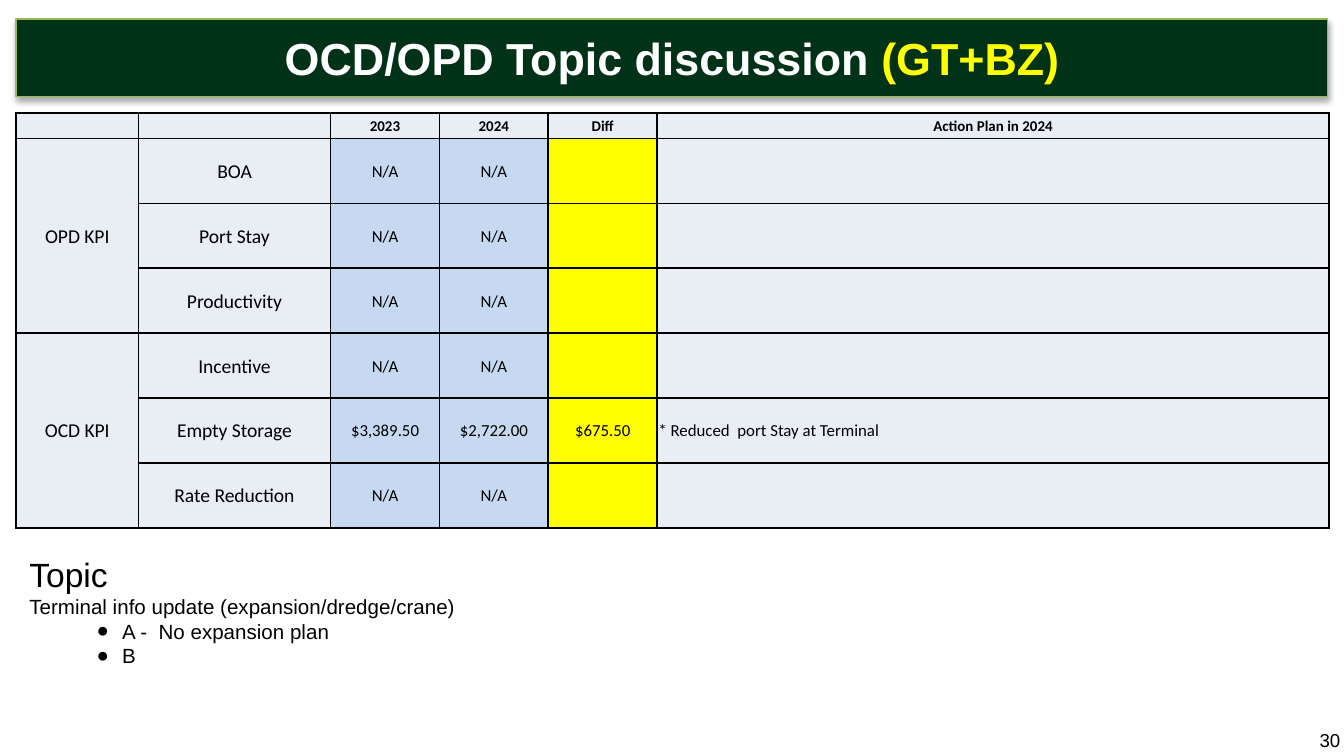
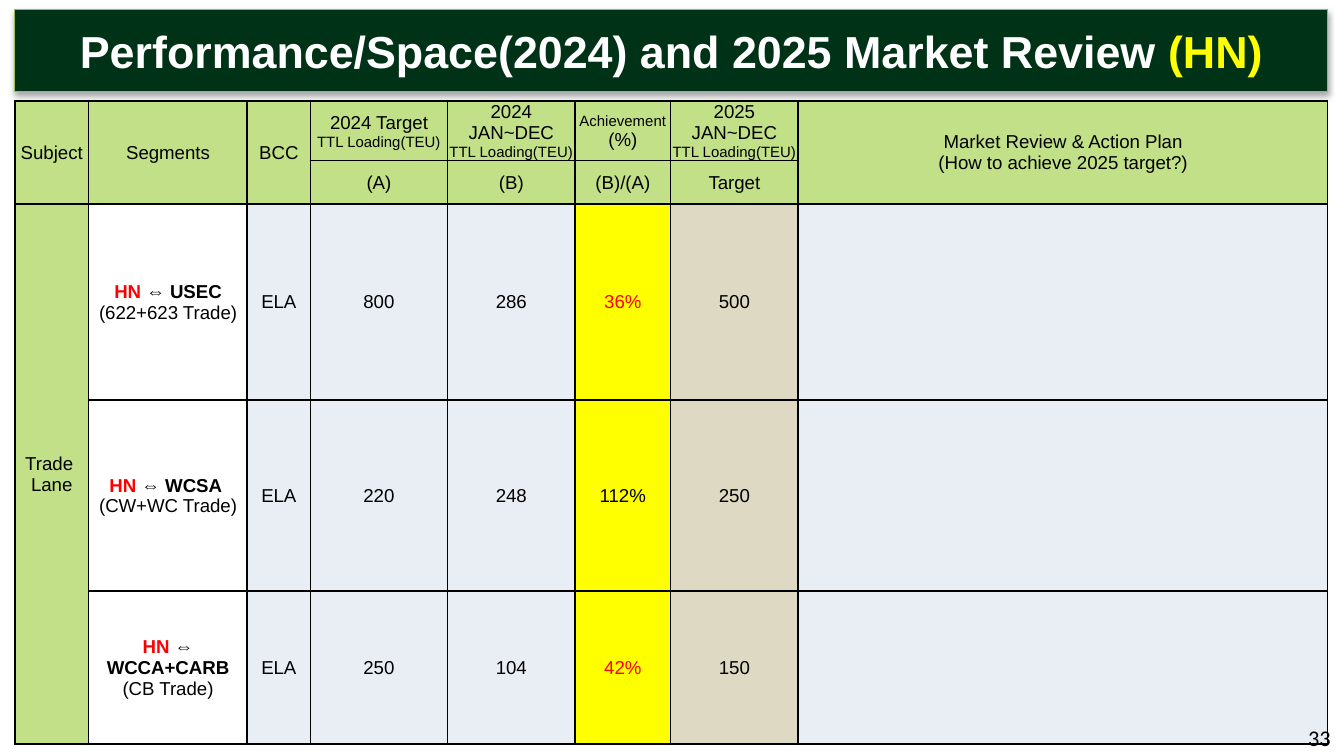
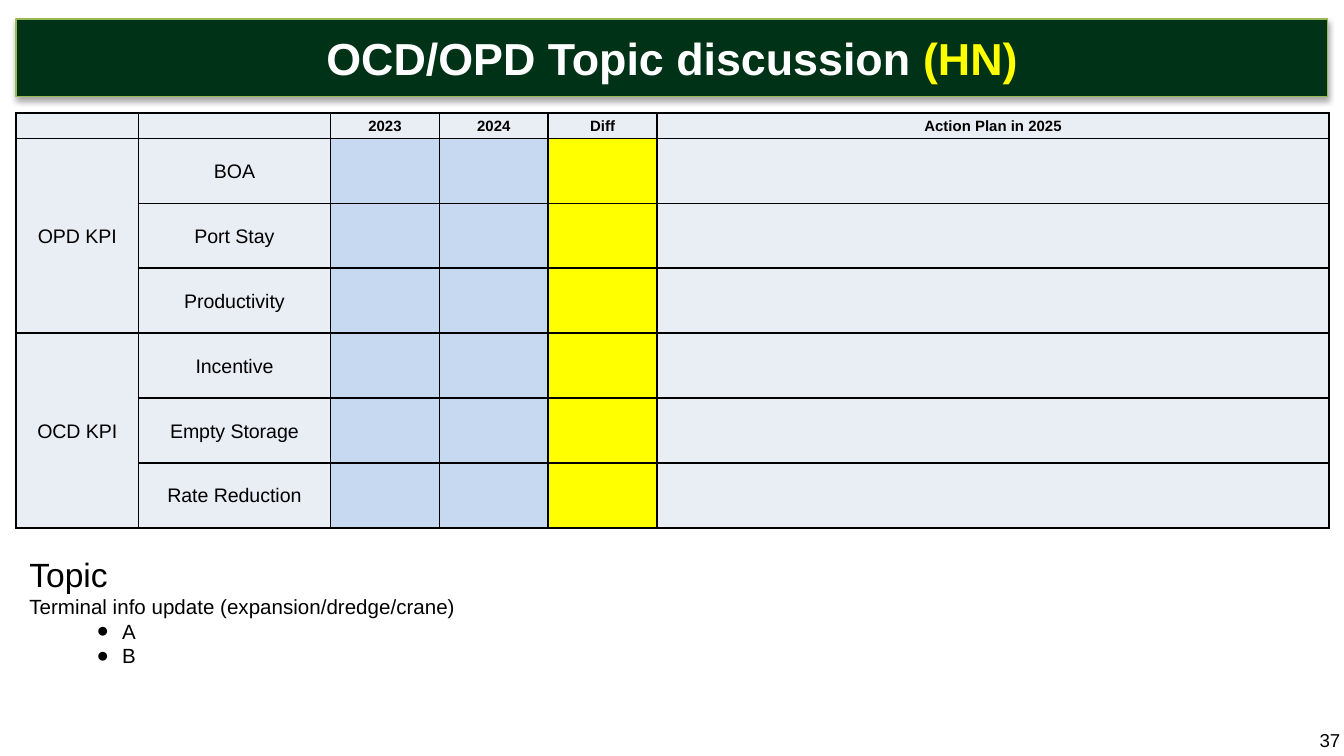
import lxml.etree
import pptx
import pptx.dml.color
import pptx.enum.text
import pptx.oxml.ns
import pptx.util

Inches = pptx.util.Inches
Pt = pptx.util.Pt
qn = pptx.oxml.ns.qn
ALIGN = pptx.enum.text.PP_ALIGN
ANCHOR = pptx.enum.text.MSO_ANCHOR
FIT = pptx.enum.text.MSO_AUTO_SIZE

PAGE_WIDTH = 10
PAGE_HEIGHT = PAGE_WIDTH * 9 / 16

BLACK, WHITE, RED, YELLOW = "000000", "FFFFFF", "FF0000", "FFFF00"
BAND, BAND_EDGE = "003217", "98B955"
PALE, BLUE, GREEN, TAN = "E9EDF4", "C6D9F1", "C2E088", "DDD9C3"

KPI_GROUPS = [
    ("OPD KPI", ["BOA", "Port Stay", "Productivity"]),
    ("OCD KPI", ["Incentive", "Empty Storage", "Rate Reduction"]),
]
KPI_COLUMNS = [0.91, 1.43, 0.81, 0.81, 0.81, 5]
KPI_FILLS = [PALE, PALE, BLUE, BLUE, YELLOW, PALE]
KPI_HEADER_HEIGHT, KPI_BODY_HEIGHT = 0.19, 2.9

KPI_PAGES = {
    "GT+BZ": {
        "number": "30", "font": "Calibri", "plan": "Action Plan in 2024",
        "default": ["N/A", "N/A", "", ""],
        "values": {"Empty Storage": ["$3,389.50", "$2,722.00", "$675.50",
                                     "* Reduced  port Stay at Terminal"]},
        "bullets": ["A -  No expansion plan", "B"],
    },
    "HN": {
        "number": "37", "font": "Arial", "plan": "Action Plan in 2025",
        "default": ["", "", "", ""], "values": {},
        "bullets": ["A", "B"],
    },
}

MARKET_COLUMNS = [0.55, 1.18, 0.47, 1.02, 0.95, 0.71, 0.95, 3.94]
MARKET_ROWS = [0.44, 0.32, 1.46, 1.42, 1.14]
MARKET_FILLS = [GREEN, WHITE, PALE, PALE, PALE, YELLOW, TAN, PALE]
MARKET_HEADER = [
    ["Subject"], ["Segments"], ["BCC"],
    ["2024 Target", "TTL Loading(TEU)"],
    ["2024 JAN~DEC", "TTL Loading(TEU)"],
    ["Achievement", "(%)"],
    ["2025 JAN~DEC", "TTL Loading(TEU)"],
    ["Market Review & Action Plan", "(How to achieve 2025 target?)"],
]
MARKET_SUBHEADER = {3: "(A)", 4: "(B)", 5: "(B)/(A)", 6: "Target"}
SMALL_LINES = ["TTL Loading(TEU)", "Achievement"]
LANES = [
    ("⇔ USEC", "(622+623 Trade)", ["ELA", "800", "286", "36%", "500"]),
    ("⇔ WCSA ", "(CW+WC Trade)", ["ELA", "220", "248", "112%", "250"]),
    ("⇔ WCCA+CARB", "(CB Trade)", ["ELA", "250", "104", "42%", "150"]),
]


def color(value):
    return pptx.dml.color.RGBColor.from_string(value)


def set_all(target, values):
    for name, value in values.items():
        setattr(target, name, value)


def place(box, left, top, width, height):
    set_all(box, {"left": Inches(left), "top": Inches(top),
                  "width": Inches(width), "height": Inches(height)})


def write_para(para, spans, font="Arial", size=10, align=ALIGN.LEFT):
    para.alignment = align
    for text, changes in spans:
        style = {"name": font, "size": size, "bold": False, "color": BLACK, **changes}
        span = para.add_run()
        span.text = text
        span.font.color.rgb = color(style.pop("color"))
        style["size"] = Pt(style["size"])
        set_all(span.font, style)


def write_lines(frame, lines, **style):
    for index, spans in enumerate(lines):
        para = frame.add_paragraph() if index else frame.paragraphs[0]
        write_para(para, spans, **style)


def add_band_title(deck, title, region, area):
    page = deck.slides.add_slide(deck.slide_layouts[5])
    band = page.shapes.title
    place(band, *area)
    band.fill.solid()
    band.fill.fore_color.rgb = color(BAND)
    band.line.color.rgb = color(BAND_EDGE)
    band.line.width = Pt(0.75)
    band.shadow.inherit = False
    effects = band._element.spPr.find(qn("a:effectLst"))
    shadow = lxml.etree.SubElement(effects, qn("a:outerShdw"), blurRad=str(Pt(3.1)),
                                   dist=str(Pt(1.8)), dir="5400000", rotWithShape="0")
    tint = lxml.etree.SubElement(shadow, qn("a:srgbClr"), val=BLACK)
    lxml.etree.SubElement(tint, qn("a:alpha"), val="35000")
    frame = band.text_frame
    set_all(frame, {"auto_size": FIT.NONE, "word_wrap": True,
                    "vertical_anchor": ANCHOR.MIDDLE, "margin_left": 0,
                    "margin_right": 0, "margin_top": 0, "margin_bottom": 0})
    spans = [(title + " ", {"bold": True, "color": WHITE}),
             (f"({region})", {"bold": True, "color": YELLOW})]
    write_lines(frame, [spans], size=24, align=ALIGN.CENTER)
    return page


def add_text(page, area, lines, **style):
    box = page.shapes.add_textbox(*map(Inches, area))
    box.text_frame.word_wrap = True
    write_lines(box.text_frame, lines, **style)
    return box.text_frame


def add_grid(page, left, top, columns, rows):
    frame = page.shapes.add_table(len(rows), len(columns), Inches(left), Inches(top),
                                  Inches(sum(columns)), Inches(sum(rows)))
    grid = frame.table
    set_all(grid, {"first_row": False, "horz_banding": False})
    for column, width in zip(grid.columns, columns):
        column.width = Inches(width)
    for row, height in zip(grid.rows, rows):
        row.height = Inches(height)
    return grid


def fill_cell(cell, fill, lines=(), **style):
    set_all(cell, {"vertical_anchor": ANCHOR.MIDDLE, "margin_left": Inches(0.01),
                   "margin_right": Inches(0.01), "margin_top": Inches(0.01),
                   "margin_bottom": 0})
    cell.fill.solid()
    cell.fill.fore_color.rgb = color(fill)
    properties = cell._tc.get_or_add_tcPr()
    for index, side in enumerate(["lnL", "lnR", "lnT", "lnB"]):
        edge = lxml.etree.Element(qn("a:" + side), w=str(Pt(1)))
        paint = lxml.etree.SubElement(edge, qn("a:solidFill"))
        lxml.etree.SubElement(paint, qn("a:srgbClr"), val=BLACK)
        properties.insert(index, edge)
    if lines:
        write_lines(cell.text_frame, lines, **{"align": ALIGN.CENTER, **style})
    else:
        ending = cell.text_frame.paragraphs[0]._p.get_or_add_endParaRPr()
        ending.set("sz", "800")


def plain(text):
    return [[(text, {})]] if text else []


def build_kpi_page(deck, region, details):
    page = add_band_title(deck, "OCD/OPD Topic discussion", region, (0.12, 0.14, 9.76, 0.58))
    font = details["font"]
    items = [(group if index == 0 else "", name)
             for group, names in KPI_GROUPS for index, name in enumerate(names)]
    grid = add_grid(page, 0.12, 0.84, KPI_COLUMNS,
                    [KPI_HEADER_HEIGHT] + [KPI_BODY_HEIGHT / len(items)] * len(items))
    for column, label in enumerate(["", "", "2023", "2024", "Diff", details["plan"]]):
        lines = [[(label, {"bold": True})]] if label else []
        fill_cell(grid.cell(0, column), PALE, lines, font=font, size=8)
    for row, (group, name) in enumerate(items, 1):
        texts = [group, name] + details["values"].get(name, details["default"])
        for column, text in enumerate(texts):
            fill_cell(grid.cell(row, column), KPI_FILLS[column], plain(text), font=font,
                      size=10.5 if column < 2 else 9,
                      align=ALIGN.LEFT if column == 5 else ALIGN.CENTER)
        if group:
            last = row + len(dict(KPI_GROUPS)[group]) - 1
            grid.cell(row, 0).merge(grid.cell(last, 0))

    lines = [[("Topic", {"size": 18})], [("Terminal info update (expansion/dredge/crane)", {})]]
    lines += [[(text, {})] for text in details["bullets"]]
    frame = add_text(page, (0.12, 4.07, 9.76, 1.33), lines, size=11)
    frame.auto_size = FIT.SHAPE_TO_FIT_TEXT
    for para in frame.paragraphs[2:]:
        para.level = 1
        properties = para._p.get_or_add_pPr()
        properties.set("marL", str(Inches(0.69)))
        properties.set("indent", str(Inches(-0.19)))
        lxml.etree.SubElement(properties, qn("a:buFont"), typeface="Arial")
        lxml.etree.SubElement(properties, qn("a:buChar"), char="●")
    number = add_text(page, (9.72, 5.39, 0.64, 0.23), plain(details["number"]))
    number.vertical_anchor = ANCHOR.MIDDLE


def build_market_page(deck):
    page = add_band_title(deck, "Performance/Space(2024) and 2025 Market Review", "HN",
                          (0.11, 0.07, 9.77, 0.61))
    grid = add_grid(page, 0.11, 0.75, MARKET_COLUMNS, MARKET_ROWS)
    for column, texts in enumerate(MARKET_HEADER):
        lines = [[(text, {"size": 8 if text in SMALL_LINES else 10})] for text in texts]
        fill_cell(grid.cell(0, column), GREEN, lines)
        fill_cell(grid.cell(1, column), GREEN, plain(MARKET_SUBHEADER.get(column)))
        if column not in MARKET_SUBHEADER:
            grid.cell(0, column).merge(grid.cell(1, column))
    for row, (lane, trade, values) in enumerate(LANES, 2):
        subject = plain("Trade ") + plain("Lane") if row == 2 else []
        segment = [[("HN ", {"bold": True, "color": RED}), (lane, {"bold": True})],
                   [(trade, {})]]
        contents = [subject, segment] + [plain(value) for value in values] + [[]]
        achieved = values[3]
        if int(achieved.rstrip("%")) < 100:
            contents[5] = [[(achieved, {"color": RED})]]
        for column, lines in enumerate(contents):
            fill_cell(grid.cell(row, column), MARKET_FILLS[column], lines)
    grid.cell(2, 0).merge(grid.cell(len(MARKET_ROWS) - 1, 0))
    add_text(page, (7.67, 5.34, 2.33, 0.3), plain("33"), font="Calibri", size=12,
             align=ALIGN.RIGHT)


def main():
    deck = pptx.Presentation()
    set_all(deck, {"slide_width": Inches(PAGE_WIDTH), "slide_height": Inches(PAGE_HEIGHT)})
    build_kpi_page(deck, "GT+BZ", KPI_PAGES["GT+BZ"])
    build_market_page(deck)
    build_kpi_page(deck, "HN", KPI_PAGES["HN"])
    deck.save("out.pptx")


if __name__ == "__main__":
    main()
